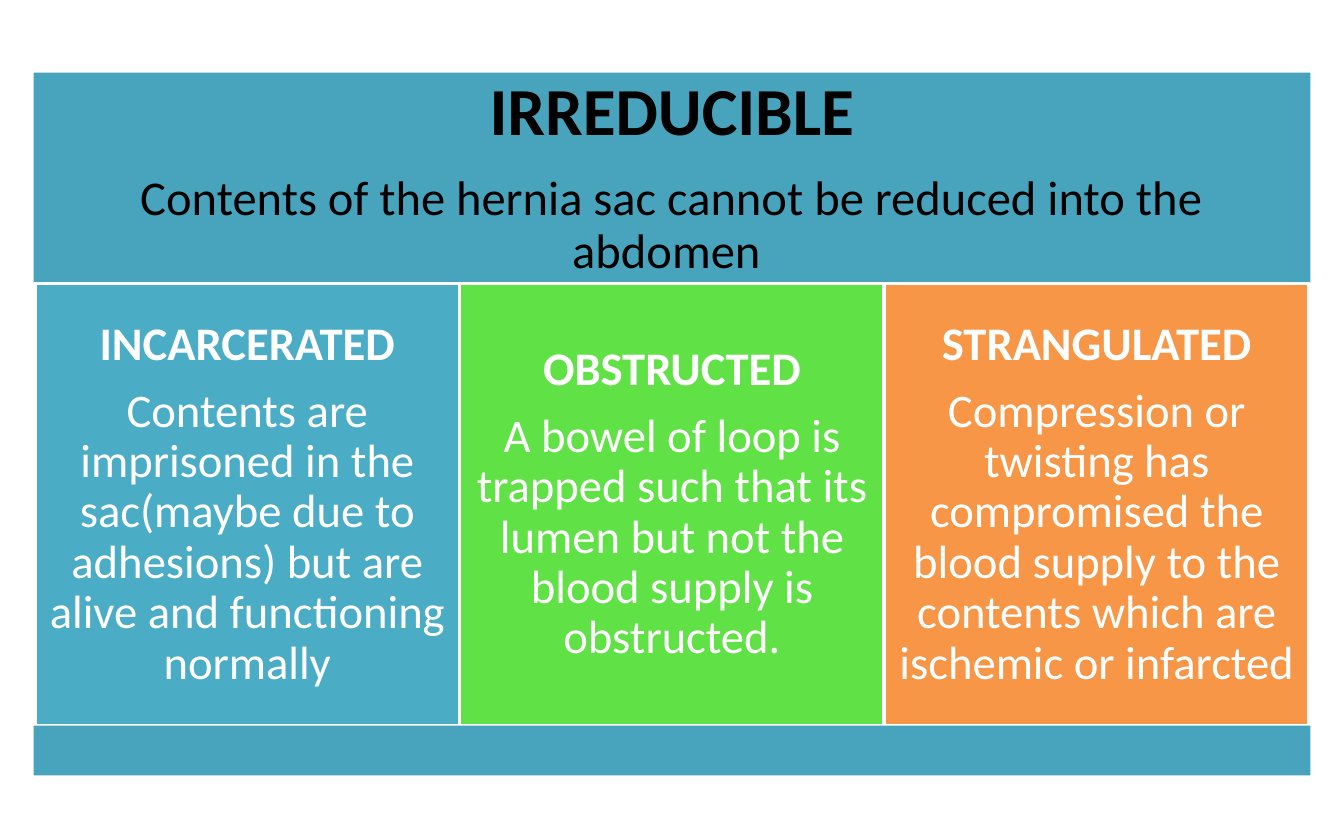
from pptx import Presentation
from pptx import util as u
from pptx.dml.color import RGBColor
from pptx.enum import shapes, text

PX = 9144  # 100 px to the inch
TEAL = RGBColor(0x48, 0xA4, 0xBD)
BLUE = RGBColor(0x4B, 0xAC, 0xC6)
GREEN = RGBColor(0x60, 0xE1, 0x46)
ORANGE = RGBColor(0xF7, 0x96, 0x46)
WHITE = RGBColor(0xFF, 0xFF, 0xFF)
BLACK = RGBColor(0x00, 0x00, 0x00)

HEADER = ("IRREDUCIBLE",
          "Contents of the hernia sac cannot be reduced into the abdomen ")
CARDS = [
    (BLUE, "INCARCERATED",
     "Contents are imprisoned in the sac(maybe due to adhesions) "
     "but are alive and functioning normally"),
    (GREEN, "OBSTRUCTED",
     "A bowel of loop is trapped such that its lumen but not the "
     "blood supply is obstructed."),
    (ORANGE, "STRANGULATED",
     "Compression or twisting has compromised the blood supply to "
     "the contents which are ischemic or infarcted"),
]

LEFT, WIDTH = 25, 950
HEADER_TOP, HEADER_H = 54, 157
CARD_W, CARD_H = 316, 329
FOOTER_H = 37


def add_box(s, x, y, w, h, fill, outline=None):
    sp = s.shapes.add_shape(shapes.MSO_SHAPE.RECTANGLE,
                            *(v * PX for v in (x, y, w, h)))
    sp.shadow.inherit = False
    sp.fill.solid()
    sp.fill.fore_color.rgb = fill
    if outline is None:
        sp.line.fill.background()
    else:
        sp.line.color.rgb = outline
        sp.line.width = u.Pt(2)
    return sp


def write(sp, title, body, sizes, color, inset):
    """Fill a box with a bold title and a plain body, centred."""
    tf = sp.text_frame
    tf.word_wrap = True
    tf.vertical_anchor = text.MSO_ANCHOR.MIDDLE
    tf.margin_left = tf.margin_right = inset * PX
    tf.margin_top = tf.margin_bottom = inset * PX
    tf.text = f"{title}\n{body}"
    for p, size, bold in zip(tf.paragraphs, sizes, (True, False)):
        p.alignment = text.PP_ALIGN.CENTER
        p.line_spacing = 0.9
        p.space_after = u.Pt(0.35 * size)
        font = p.runs[0].font
        font.name, font.size, font.bold = "Calibri", u.Pt(size), bold
        font.color.rgb = color


prs = Presentation()
prs.slide_width, prs.slide_height = 1000 * PX, 625 * PX
s = prs.slides.add_slide(prs.slide_layouts[6])

header = add_box(s, LEFT, HEADER_TOP, WIDTH, HEADER_H, TEAL)
write(header, *HEADER, (36, 26), BLACK, 15)

card_top = HEADER_TOP + HEADER_H
card_left = LEFT + (WIDTH - CARD_W * len(CARDS)) // 2
for i, (fill, title, body) in enumerate(CARDS):
    card = add_box(s, card_left + i * CARD_W, card_top, CARD_W, CARD_H,
                   fill, WHITE)
    write(card, title, body, (25, 25), WHITE, 10)

add_box(s, LEFT, card_top + CARD_H, WIDTH, FOOTER_H, TEAL)

prs.save("out.pptx")
